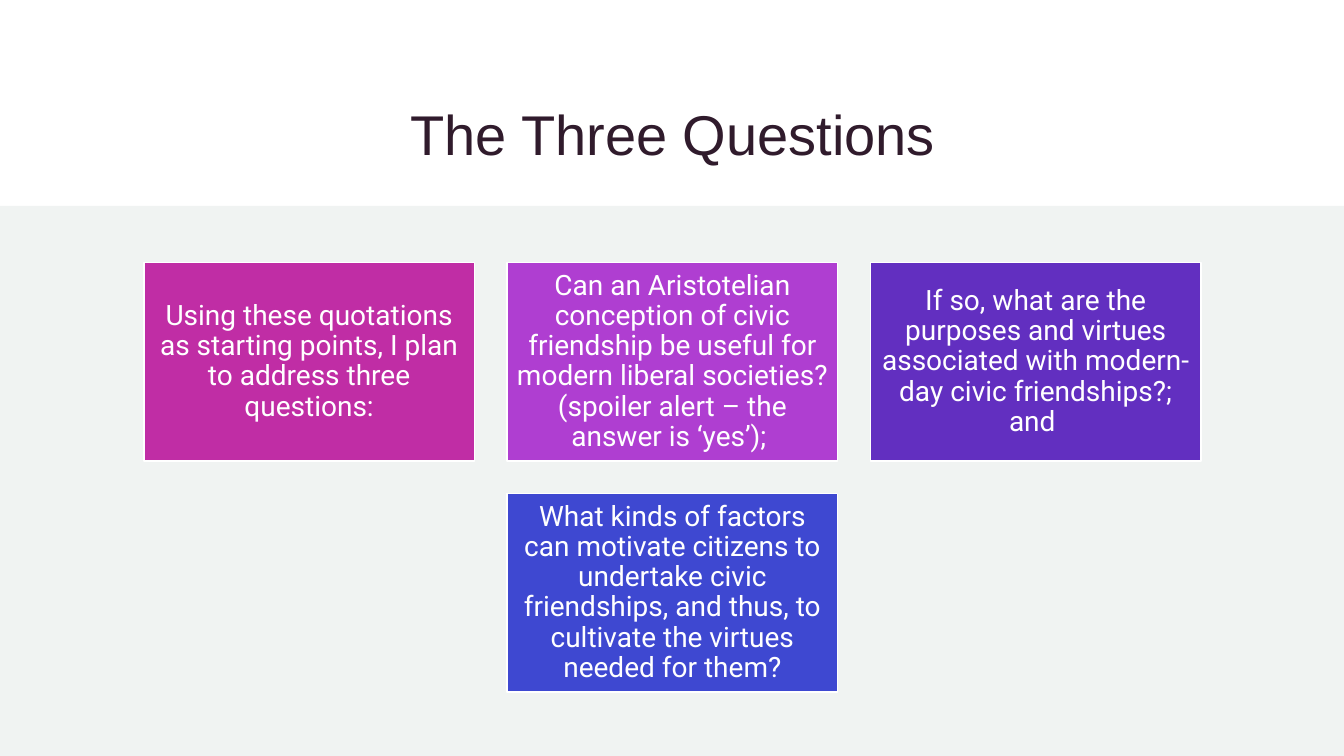
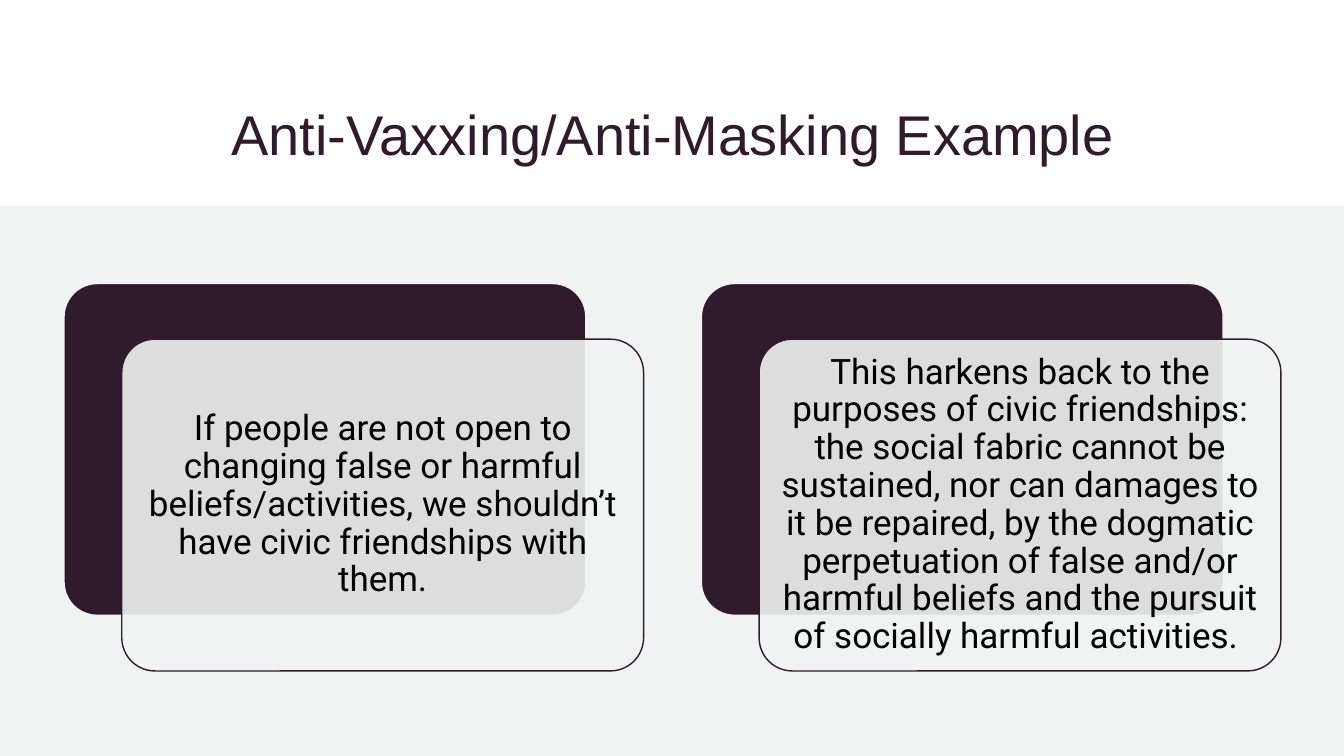
from pptx import Presentation
from pptx.dml.color import RGBColor
from pptx.enum.shapes import MSO_SHAPE
from pptx.enum.text import MSO_ANCHOR, PP_ALIGN
from pptx.oxml.ns import qn
from pptx.util import Emu, Pt
from lxml import etree

RECTANGLE = MSO_SHAPE.RECTANGLE
ROUNDED = MSO_SHAPE.ROUNDED_RECTANGLE
MIDDLE = MSO_ANCHOR.MIDDLE
CENTER = PP_ALIGN.CENTER

EMU_PER_PX = 9525
SLIDE_WIDTH, SLIDE_HEIGHT = 1280, 720
BAND_TOP = 196
TITLE_BOX = (150, 74, 981, 105)
BAND_BOX = (0, BAND_TOP, SLIDE_WIDTH, SLIDE_HEIGHT - BAND_TOP)
TITLE_FONT, BODY_FONT = "Arial", "Roboto"

COLORS = {
    "white": "FFFFFF",
    "black": "000000",
    "plum": "301B2C",
    "mist": "F0F3F2",
    "magenta": "C02DA5",
    "orchid": "AF3ED1",
    "violet": "622FC0",
    "blue": "3E48D1",
}

QUESTIONS = [
    ("magenta", "Using these quotations as starting points, I plan to address three questions:"),
    ("orchid", "Can an Aristotelian conception of civic friendship be useful for modern "
               "liberal societies? (spoiler alert – the answer is ‘yes’); "),
    ("violet", "If so, what are the purposes and virtues associated with modern-day "
               "civic friendships?; and "),
    ("blue", "What kinds of factors can motivate citizens to undertake civic friendships, "
             "and thus, to cultivate the virtues needed for them?"),
]

EXAMPLES = [
    "If people are not open to changing false or harmful beliefs/activities, "
    "we shouldn’t have civic friendships with them.",
    "This harkens back to the purposes of civic friendships: the social fabric cannot be "
    "sustained, nor can damages to it be repaired, by the dogmatic perpetuation of false "
    "and/or harmful beliefs and the pursuit of socially harmful activities. ",
]


def px(value):
    return Emu(value * EMU_PER_PX)


def color(name):
    return RGBColor.from_string(COLORS[name])


def add_box(slide, kind, box, fill, line=None):
    shape = slide.shapes.add_shape(kind, *map(px, box))
    shape.shadow.inherit = False
    shape.fill.solid()
    shape.fill.fore_color.rgb = color(fill)
    if line:
        shape.line.color.rgb = color(line)
        shape.line.width = Pt(1)
    else:
        shape.line.fill.background()
    return shape


def set_text(shape, text, font, size, ink, margin, spacing=None):
    frame = shape.text_frame
    frame.text = text
    frame.word_wrap = True
    frame.vertical_anchor = MIDDLE
    frame.margin_left = frame.margin_right = px(margin)
    frame.margin_top = frame.margin_bottom = px(margin)
    paragraph = frame.paragraphs[0]
    paragraph.alignment = CENTER
    if spacing:
        paragraph.line_spacing = spacing
    run = paragraph.runs[0]
    run.font.name = font
    run.font.size = Pt(size)
    run.font.color.rgb = color(ink)


def set_opacity(shape, percent):
    rgb = shape.fill._xPr.find(qn("a:solidFill"))[0]
    etree.SubElement(rgb, qn("a:alpha")).set("val", str(percent * 1000))


def add_titled_slide(presentation, title):
    """White title area above a pale content band."""
    slide = presentation.slides.add_slide(presentation.slide_layouts[6])
    title_box = slide.shapes.add_textbox(*map(px, TITLE_BOX))
    set_text(title_box, title, TITLE_FONT, 40, "plum", 5)
    add_box(slide, RECTANGLE, BAND_BOX, "mist")
    return slide


def add_question_cards(slide, box, questions, columns=3, gap=31):
    """Grid of cards; a short last row is centred."""
    left, top, width, height = box
    rows = -(-len(questions) // columns)
    card_width = (width - gap * (columns - 1)) // columns
    card_height = (height - gap * (rows - 1)) // rows
    for index, (fill, text) in enumerate(questions):
        row, column = divmod(index, columns)
        in_row = min(columns, len(questions) - row * columns)
        indent = (columns - in_row) * (card_width + gap) // 2
        card_box = (left + indent + column * (card_width + gap),
                    top + row * (card_height + gap), card_width, card_height)
        card = add_box(slide, RECTANGLE, card_box, fill, "white")
        set_text(card, text, BODY_FONT, 20, "white", 8, 0.9)


def add_layered_panel(slide, box, text, shift_x=55, shift_y=53):
    """Dark panel with a translucent text panel shifted down and right."""
    left, top, width, height = box
    panel_width, panel_height = width - shift_x, height - shift_y
    back = add_box(slide, ROUNDED, (left, top, panel_width, panel_height), "plum", "mist")
    front = add_box(slide, ROUNDED, (left + shift_x, top + shift_y, panel_width, panel_height),
                    "mist", "plum")
    for panel in (back, front):
        panel.adjustments[0] = 0.1
    set_opacity(front, 90)
    set_text(front, text, BODY_FONT, 25, "black", 10, 0.9)


def add_example_panels(slide, box, texts, gap=55):
    left, top, width, height = box
    panel_width = (width - gap * (len(texts) - 1)) // len(texts)
    for index, text in enumerate(texts):
        panel_box = (left + index * (panel_width + gap), top, panel_width, height)
        add_layered_panel(slide, panel_box, text)


def main():
    presentation = Presentation()
    presentation.slide_width = px(SLIDE_WIDTH)
    presentation.slide_height = px(SLIDE_HEIGHT)

    # Questions
    slide = add_titled_slide(presentation, "The Three Questions")
    add_question_cards(slide, (137, 250, 1007, 409), QUESTIONS)

    # Example
    slide = add_titled_slide(presentation, "Anti-Vaxxing/Anti-Masking Example")
    add_example_panels(slide, (61, 270, 1159, 369), EXAMPLES)

    presentation.save("out.pptx")


if __name__ == "__main__":
    main()
